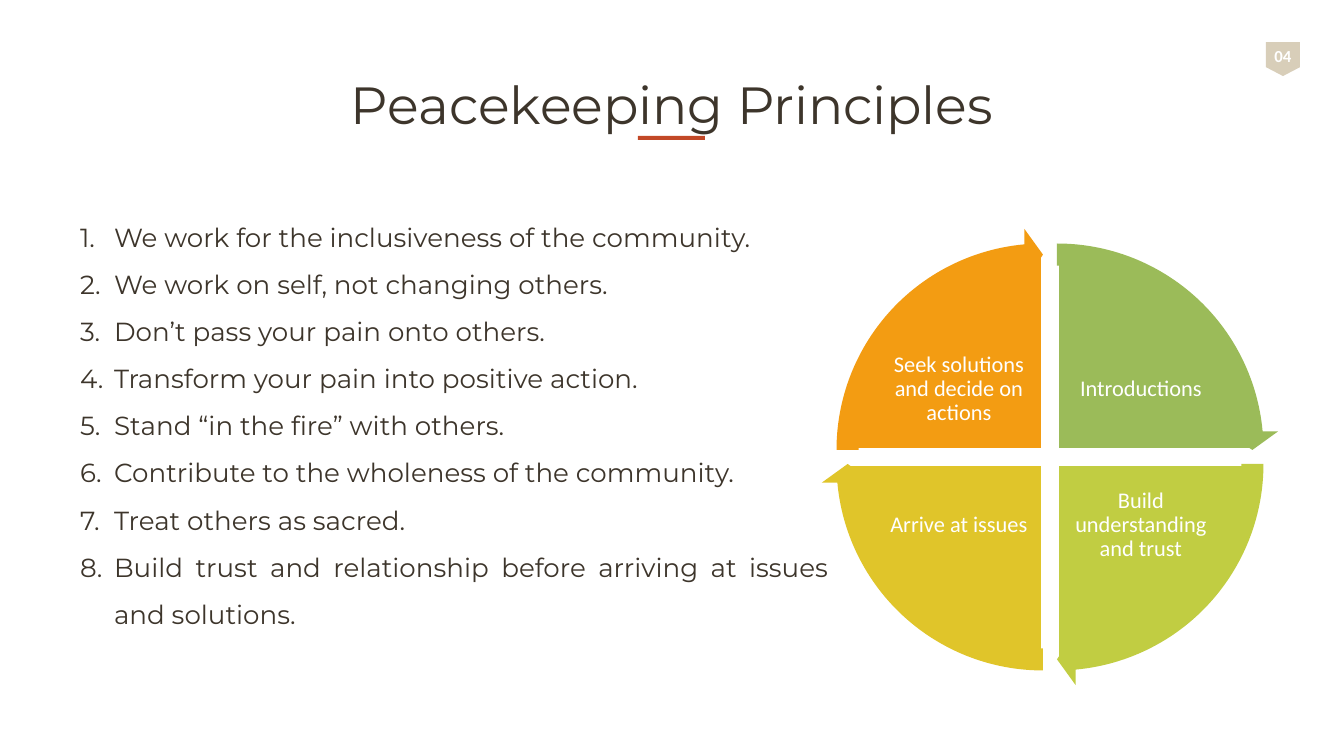
"""Build the Peacekeeping Principles slide with a four-step cycle."""
import lxml.etree
import pptx
import pptx.dml.color
import pptx.enum.shapes
import pptx.enum.text
import pptx.oxml.ns
import pptx.util

TITLE = "Peacekeeping Principles"
PAGE = "04"
PRINCIPLES = [
    "We work for the inclusiveness of the community.",
    "We work on self, not changing others.",
    "Don’t pass your pain onto others.",
    "Transform your pain into positive action.",
    "Stand “in the fire” with others.",
    "Contribute to the wholeness of the community.",
    "Treat others as sacred.",
    "Build trust and relationship before arriving at issues and solutions.",
]
# Each step: label, colour, horizontal side, vertical side, start angle, end angle
STEPS = [
    ("Introductions", "9BBB59", 1, -1, 270, 0),
    ("Build understanding and trust", "C1CD42", 1, 1, 0, 90),
    ("Arrive at issues", "E0C52A", -1, 1, 90, 180),
    ("Seek solutions and decide on actions", "F39C12", -1, -1, 180, 270),
]
INK, WHITE, SAND, RUST = "3D352B", "FFFFFF", "D8CEB9", "C24827"
CENTER_X, CENTER_Y, GAP = 1050, 457, 7
PIE, ARROW = 395, 444
LABEL_W, LABEL_H, LABEL_DX, LABEL_DY = 145, 109, 91, 68
ANGLE_UNIT = 0.6

SHAPE = pptx.enum.shapes.MSO_SHAPE
ALIGN = pptx.enum.text.PP_ALIGN
ANCHOR = pptx.enum.text.MSO_ANCHOR


def px(n):
    return round(n * 914400 / 134.4)


def rgb(color):
    return pptx.dml.color.RGBColor.from_string(color)


def add_shape(slide, kind, box, fill, line=None, adjust=()):
    s = slide.shapes.add_shape(kind, *map(px, box))
    s.shadow.inherit = False
    s.fill.solid()
    s.fill.fore_color.rgb = rgb(fill)
    if line:
        s.line.color.rgb = rgb(line)
        s.line.width = pptx.util.Pt(2)
    else:
        s.line.fill.background()
    for i, value in enumerate(adjust):
        s.adjustments[i] = value
    return s


def add_text(slide, text, box, size, color, font="Montserrat", bold=False,
             align=ALIGN.CENTER, anchor=ANCHOR.TOP, insets=(13, 7, 13, 7),
             spacing=1.0, wrap=True, numbered=False):
    tf = slide.shapes.add_textbox(*map(px, box)).text_frame
    tf.word_wrap = wrap
    tf.vertical_anchor = anchor
    tf.margin_left, tf.margin_top, tf.margin_right, tf.margin_bottom = map(px, insets)
    lines = [text] if isinstance(text, str) else text
    for i, line in enumerate(lines):
        p = tf.add_paragraph() if i else tf.paragraphs[0]
        p.alignment = align
        p.line_spacing = spacing
        r = p.add_run()
        r.text = line
        r.font.size = pptx.util.Pt(size)
        r.font.name = font
        r.font.bold = bold
        r.font.color.rgb = rgb(color)
        if numbered:
            pPr = p._p.get_or_add_pPr()
            pPr.set("marL", str(px(34)))
            pPr.set("indent", str(px(-34)))
            lxml.etree.SubElement(pPr, pptx.oxml.ns.qn("a:buFont"), typeface=font)
            lxml.etree.SubElement(pPr, pptx.oxml.ns.qn("a:buAutoNum"), type="arabicPeriod")


def centered(x, y, w, h):
    return x - w / 2, y - h / 2, w, h


def add_cycle(slide):
    for label, color, side_x, side_y, start, end in STEPS:
        x, y = CENTER_X + side_x * GAP, CENTER_Y + side_y * GAP
        add_shape(slide, SHAPE.PIE, centered(x, y, PIE, PIE), color, line=WHITE,
                  adjust=(start * ANGLE_UNIT, end * ANGLE_UNIT))
        add_text(slide, label,
                 centered(CENTER_X + side_x * LABEL_DX, CENTER_Y + side_y * LABEL_DY,
                          LABEL_W, LABEL_H),
                 12, WHITE, font="Calibri", anchor=ANCHOR.MIDDLE,
                 insets=(2, 2, 2, 2), spacing=0.9)
    for label, color, side_x, side_y, start, end in STEPS:
        x, y = CENTER_X + side_x * GAP, CENTER_Y + side_y * GAP
        tip = (start + 90) % 360 or 360
        add_shape(slide, SHAPE.CIRCULAR_ARROW, centered(x, y, ARROW, ARROW), color,
                  adjust=(0.05, 3.28, tip * ANGLE_UNIT - 3.28, start * ANGLE_UNIT, 0.06))


def main():
    prs = pptx.Presentation()
    prs.slide_width, prs.slide_height = px(1344), px(756)
    slide = prs.slides.add_slide(prs.slide_layouts[6])
    add_text(slide, PRINCIPLES, (67, 199, 784, 460), 14, INK, align=ALIGN.JUSTIFY,
             insets=(13, 7, 22, 5), spacing=1.5, numbered=True)
    badge = add_shape(slide, SHAPE.PENTAGON, (1266, 42, 34, 34), SAND, adjust=(0.26,))
    badge.rotation = 90
    add_text(slide, PAGE, (1261, 39, 44, 34), 9, WHITE, font="Calibri", bold=True,
             wrap=False)
    add_text(slide, TITLE, (67, 65, 1210, 77), 28, INK, anchor=ANCHOR.MIDDLE)
    add_shape(slide, SHAPE.RECTANGLE, (638, 136, 67, 4), RUST)
    add_cycle(slide)
    prs.save("out.pptx")


if __name__ == "__main__":
    main()
